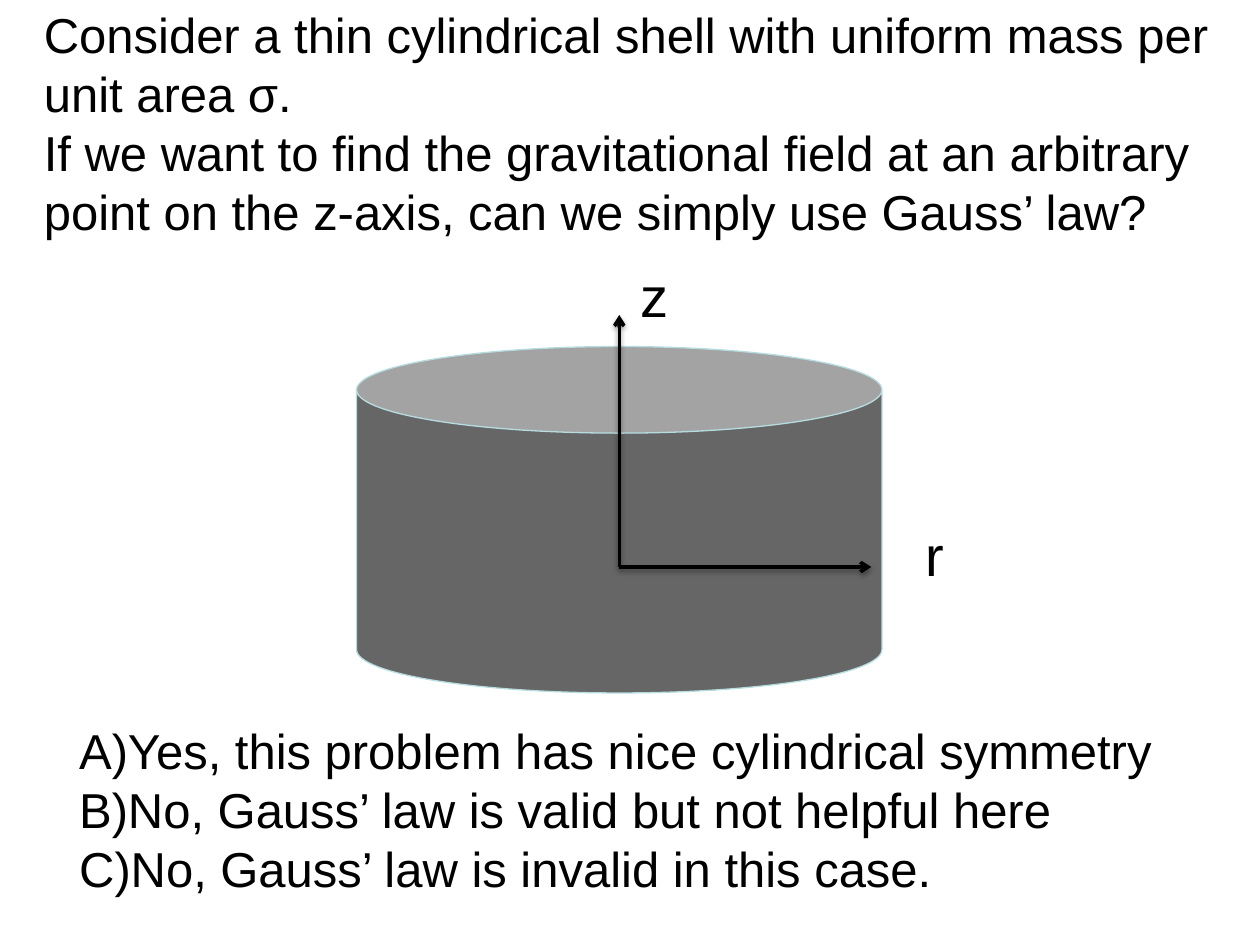
import pptx
import pptx.util
import pptx.dml.color
import pptx.enum.shapes
import pptx.enum.text
import pptx.oxml.ns
import lxml.etree

Inches = pptx.util.Inches
Pt = pptx.util.Pt
BLACK = pptx.dml.color.RGBColor(0x00, 0x00, 0x00)
GREY = pptx.dml.color.RGBColor(0x66, 0x66, 0x66)
PALE = pptx.dml.color.RGBColor(0xB6, 0xDC, 0xDF)
FONT = "Arial"


def add_node(parent, tag, **attrs):
    node = lxml.etree.SubElement(parent, pptx.oxml.ns.qn(tag))
    for key, value in attrs.items():
        node.set(key, str(value))
    return node


def add_text(slide, box, lines, size=28, wrap=True, letters=False):
    frame = slide.shapes.add_textbox(*map(Inches, box)).text_frame
    frame.word_wrap = wrap
    frame.auto_size = pptx.enum.text.MSO_AUTO_SIZE.SHAPE_TO_FIT_TEXT
    frame.text = "\n".join(lines)
    for para in frame.paragraphs:
        font = para.runs[0].font
        font.name, font.size = FONT, Pt(size)
        font.color.rgb = BLACK
        if letters:
            props = para._p.get_or_add_pPr()
            indent = Inches(0.38)
            props.set("marL", str(indent))
            props.set("indent", str(-indent))
            add_node(props, "a:buFont", typeface=FONT)
            add_node(props, "a:buAutoNum", type="alphaUcParenR")


def add_arrow(slide, start, end):
    arrow = slide.shapes.add_connector(
        pptx.enum.shapes.MSO_CONNECTOR.STRAIGHT, *map(Inches, start + end))
    arrow.line.color.rgb = BLACK
    arrow.line.width = Pt(2)
    add_node(arrow.line._get_or_add_ln(), "a:tailEnd", type="arrow")
    effects = add_node(arrow._element.spPr, "a:effectLst")
    shadow = add_node(effects, "a:outerShdw", blurRad=Pt(3.1), dist=Pt(1.6),
                      dir=90 * 60000, rotWithShape=0)
    color = add_node(shadow, "a:srgbClr", val=BLACK)
    add_node(color, "a:alpha", val=38000)


def add_shell(slide, box):
    left, top, width, height = box
    shell = slide.shapes.add_shape(
        pptx.enum.shapes.MSO_SHAPE.CAN, *map(Inches, box))
    shell.shadow.inherit = False
    shell.fill.solid()
    shell.fill.fore_color.rgb = GREY
    shell.line.color.rgb = PALE
    shell.line.width = Pt(0.75)

    x, y, reach = left + width / 2, top + 1.75, 2
    add_text(slide, (x + 0.07, top - 0.72, 0.43, 0.64), ["z"], size=32, wrap=False)
    add_text(slide, (left + width + 0.25, y - 0.42, 0.36, 0.64), ["r"],
             size=32, wrap=False)
    for end in ((x + reach, y), (x, y - reach)):
        add_arrow(slide, (x, y), end)


def main():
    deck = pptx.Presentation()
    deck.slide_width, deck.slide_height = Inches(10), Inches(7.5)
    slide = deck.slides.add_slide(deck.slide_layouts.get_by_name("Blank"))
    add_shell(slide, (2.83, 2.75, 4.17, 2.75))
    add_text(slide, (0.25, -0.01, 9.75, 1.99), [
        "Consider a thin cylindrical shell with uniform mass per unit area σ.",
        "If we want to find the gravitational field at an arbitrary point "
        "on the z-axis, can we simply use Gauss’ law?",
    ])
    add_text(slide, (0.53, 5.67, 8.8, 1.51), [
        "Yes, this problem has nice cylindrical symmetry",
        "No, Gauss’ law is valid but not helpful here",
        "No, Gauss’ law is invalid in this case.",
    ], wrap=False, letters=True)
    deck.save("out.pptx")


if __name__ == "__main__":
    main()
